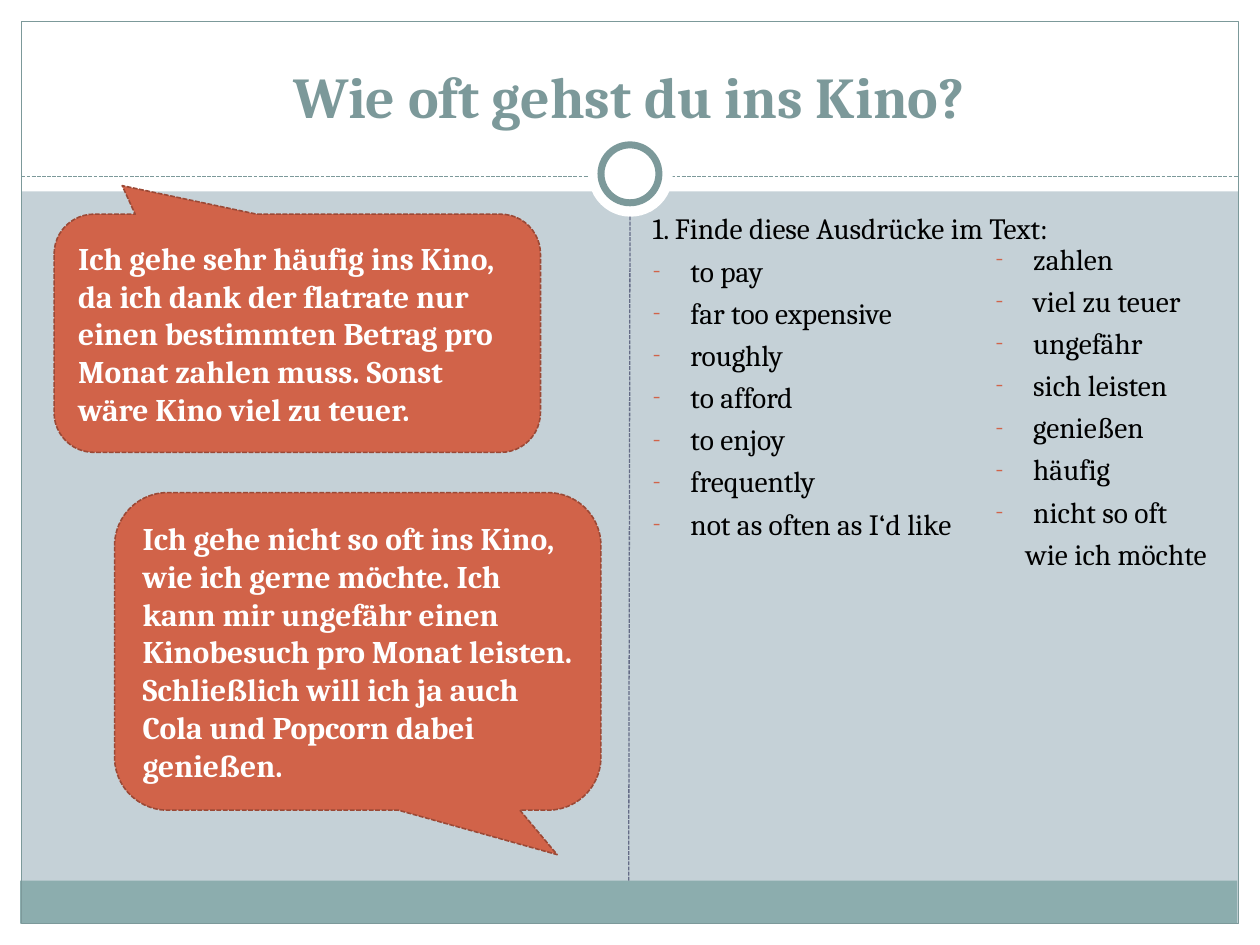
from dataclasses import dataclass

from pptx import Presentation
from pptx.dml.color import RGBColor
from pptx.enum.dml import MSO_LINE_DASH_STYLE as Dash
from pptx.enum.shapes import MSO_CONNECTOR as Connector, MSO_SHAPE as Preset
from pptx.enum.text import MSO_ANCHOR as Anchor, MSO_AUTO_SIZE as AutoSize, PP_ALIGN as Align
from pptx.oxml.ns import qn
from pptx.util import Inches, Pt
from lxml.etree import SubElement


@dataclass(frozen=True)
class Theme:
    font: str = "Cambria"
    white: str = "FFFFFF"
    black: str = "000000"
    backdrop: str = "C5D1D7"
    band: str = "8CADAE"
    teal: str = "7C999A"
    slate: str = "646B86"
    orange: str = "D16349"
    rust: str = "9B4936"
    title_size: float = 33
    speech_size: float = 18
    list_size: float = 16.8
    list_gap: float = 3.9


class SlideBuilder:
    def __init__(self, slide, theme):
        self.slide = slide
        self.theme = theme
        slide.background.fill.solid()
        slide.background.fill.fore_color.rgb = RGBColor.from_string(theme.backdrop)

    def stroke(self, line, color, width, dash=None):
        line.color.rgb = RGBColor.from_string(color)
        line.width = Pt(width)
        if dash:
            line.dash_style = dash

    def shape(self, preset, box, fill=None, line=None, width=0.75, dash=None):
        shape = self.slide.shapes.add_shape(preset, *map(Inches, box))
        shape.shadow.inherit = False
        if fill:
            shape.fill.solid()
            shape.fill.fore_color.rgb = RGBColor.from_string(fill)
        else:
            shape.fill.background()
        if line:
            self.stroke(shape.line, line, width, dash)
        else:
            shape.line.fill.background()
        return shape

    def dashed_line(self, start, end, color):
        rule = self.slide.shapes.add_connector(Connector.STRAIGHT, *map(Inches, start + end))
        self.stroke(rule.line, color, 0.75, Dash.SQUARE_DOT)
        SubElement(rule._element.spPr, qn("a:effectLst"))

    def add_text(self, paragraph, text, size, color, bold=False):
        run = paragraph.add_run()
        run.text = text
        run.font.name = self.theme.font
        run.font.size = Pt(size)
        run.font.bold = bold
        run.font.color.rgb = RGBColor.from_string(color)

    def placeholder(self, idx, box, anchor):
        holder = self.slide.placeholders[idx]
        holder.left, holder.top, holder.width, holder.height = map(Inches, box)
        holder._element.getparent().append(holder._element)
        frame = holder.text_frame
        frame.word_wrap = True
        frame.auto_size = AutoSize.NONE
        frame.vertical_anchor = anchor
        return frame

    def title(self, text, box):
        heading = self.placeholder(0, box, Anchor.BOTTOM).paragraphs[0]
        heading.alignment = Align.CENTER
        self.add_text(heading, text, self.theme.title_size, self.theme.teal, True)

    def callout(self, text, box, pointer):
        bubble = self.shape(Preset.ROUNDED_RECTANGULAR_CALLOUT, box, self.theme.orange,
                            self.theme.rust, 0.9, Dash.SQUARE_DOT)
        for index, value in enumerate((*pointer, 0.167)):
            bubble.adjustments[index] = value
        bubble.text_frame.word_wrap = True
        bubble.text_frame.vertical_anchor = Anchor.MIDDLE
        speech = bubble.text_frame.paragraphs[0]
        speech.alignment = Align.LEFT
        self.add_text(speech, text, self.theme.speech_size, self.theme.white, True)

    def indent(self, paragraph, margin, first_line, dash):
        properties = paragraph._p.get_or_add_pPr()
        properties.set("marL", str(Inches(margin)))
        properties.set("indent", str(Inches(first_line)))
        if dash:
            color = SubElement(properties, qn("a:buClr"))
            SubElement(color, qn("a:srgbClr"), val=self.theme.orange)
            SubElement(properties, qn("a:buSzPct"), val="85000")
            SubElement(properties, qn("a:buFont"), typeface=self.theme.font)
            SubElement(properties, qn("a:buChar"), char="-")
        else:
            SubElement(properties, qn("a:buNone"))

    def word_list(self, idx, box, words, intro=None, ending=None):
        frame = self.placeholder(idx, box, Anchor.TOP)
        entries = [(word, 0.3, -0.3, True) for word in words]
        if intro:
            entries.insert(0, (intro, 0, 0, False))
        if ending:
            entries.append((ending, 0.24, 0, False))
        for number, (text, margin, first_line, dash) in enumerate(entries):
            entry = frame.add_paragraph() if number else frame.paragraphs[0]
            entry.space_before = Pt(self.theme.list_gap)
            self.indent(entry, margin, first_line, dash)
            self.add_text(entry, text, self.theme.list_size, self.theme.black)


def main():
    deck = Presentation()
    deck.slide_width, deck.slide_height = Inches(10), Inches(7.5)
    theme = Theme()
    page = SlideBuilder(deck.slides.add_slide(deck.slide_layouts[3]), theme)

    for margin in ((0, 7.33, 10, 0.17), (0, 0, 10, 1.52),
                   (0, 0, 0.17, 7.5), (9.83, 0, 0.17, 7.5)):
        page.shape(Preset.RECTANGLE, margin, theme.white)
    page.shape(Preset.RECTANGLE, (0.16, 6.99, 9.66, 0.34), theme.band)
    page.shape(Preset.RECTANGLE, (0.17, 0.17, 9.66, 7.16), line=theme.teal)
    page.dashed_line((0.17, 1.4), (9.83, 1.4), theme.teal)
    page.shape(Preset.OVAL, (4.67, 1.05, 0.67, 0.67), theme.white)
    page.shape(Preset.OVAL, (4.77, 1.15, 0.46, 0.46), theme.white, theme.teal, 4)
    page.dashed_line((4.99, 6.99), (5, 1.72), theme.slate)

    page.title("Wie oft gehst du ins Kino?", (0.33, 0.25, 9.33, 0.83))
    page.callout("Ich gehe sehr häufig ins Kino, da ich dank der flatrate nur einen "
                 "bestimmten Betrag pro Monat zahlen muss. Sonst wäre Kino viel zu teuer.",
                 (0.43, 1.7, 3.86, 1.89), (-0.36, -0.62))
    page.callout("Ich gehe nicht so oft ins Kino, wie ich gerne möchte. Ich kann mir "
                 "ungefähr einen Kinobesuch pro Monat leisten. Schließlich will ich ja "
                 "auch Cola und Popcorn dabei genießen.",
                 (0.91, 3.91, 3.86, 2.52), (0.41, 0.64))
    page.word_list(1, (5.08, 1.62, 4.41, 2.44),
                   ("to pay", "far too expensive", "roughly", "to afford", "to enjoy",
                    "frequently", "not as often as I‘d like"),
                   intro="1. Finde diese Ausdrücke im Text:")
    page.word_list(2, (7.8, 1.86, 2.09, 2.36),
                   ("zahlen", "viel zu teuer", "ungefähr", "sich leisten", "genießen",
                    "häufig", "nicht so oft"),
                   ending="wie ich möchte")
    deck.save("out.pptx")


if __name__ == "__main__":
    main()
